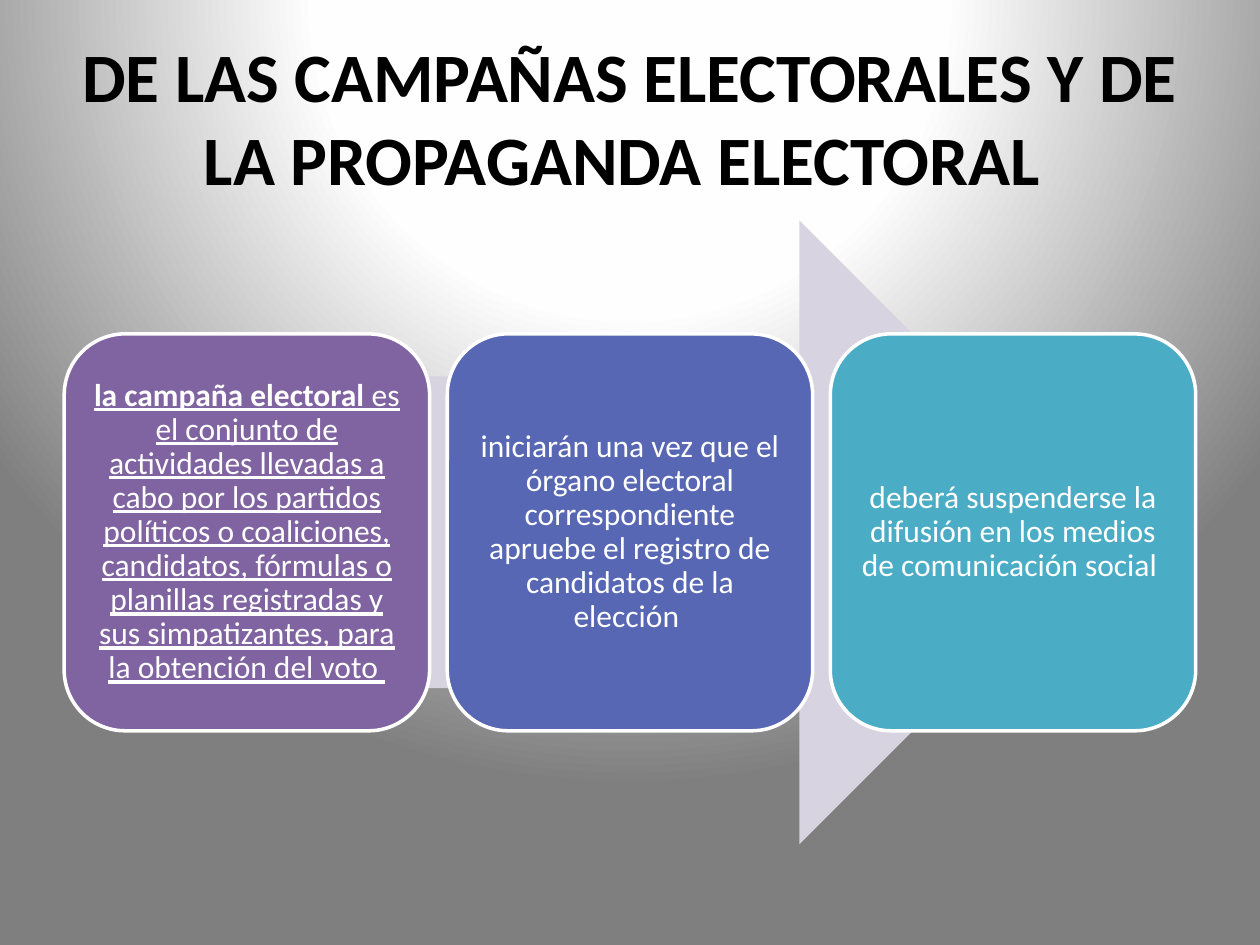
from dataclasses import dataclass

from pptx import Presentation
from pptx.dml.color import RGBColor
from pptx.enum.shapes import MSO_SHAPE
from pptx.enum.text import MSO_ANCHOR, PP_ALIGN
from pptx.oxml import parse_xml
from pptx.oxml.ns import nsdecls, qn
from pptx.slide import Slide
from pptx.util import Pt

ARROW = MSO_SHAPE.RIGHT_ARROW
ROUNDED = MSO_SHAPE.ROUNDED_RECTANGLE
MIDDLE = MSO_ANCHOR.MIDDLE
CENTER = PP_ALIGN.CENTER

BLACK = RGBColor(0x00, 0x00, 0x00)
WHITE = RGBColor(0xFF, 0xFF, 0xFF)
LAVENDER = RGBColor(0xD8, 0xD3, 0xE0)
PURPLE = RGBColor(0x80, 0x64, 0xA2)
BLUE = RGBColor(0x57, 0x67, 0xB4)
TEAL = RGBColor(0x4B, 0xAC, 0xC6)

FONT = "Calibri"
TITLE = "DE LAS CAMPAÑAS ELECTORALES Y DE LA PROPAGANDA ELECTORAL "
BACKGROUND_STOPS = ((0, "FFFFFF"), (40, "FEFEFE"), (100, "7F7F7F"))

CARD_LEFT, CARD_TOP = 36.7, 190.8
CARD_WIDTH, CARD_HEIGHT = 208.8, 226.8
CARD_PITCH = 218.9
CARD_INSET = 5


@dataclass(frozen=True)
class Card:
    color: RGBColor
    text: str
    lead: str = ""
    underline: bool = False


CARDS = (
    Card(
        PURPLE,
        "es el conjunto de actividades llevadas a cabo por los partidos políticos "
        "o coaliciones, candidatos, fórmulas o planillas registradas y sus "
        "simpatizantes, para la obtención del voto ",
        lead="la campaña electoral ",
        underline=True,
    ),
    Card(
        BLUE,
        "iniciarán una vez que el órgano electoral correspondiente apruebe "
        "el registro de candidatos de la elección ",
    ),
    Card(TEAL, "deberá suspenderse la difusión en los medios de comunicación social "),
)


def set_background(s: Slide) -> None:
    s.background.fill.gradient()
    stops = "".join(
        f'<a:gs pos="{pos * 1000}"><a:srgbClr val="{color}"/></a:gs>'
        for pos, color in BACKGROUND_STOPS
    )
    radial = parse_xml(
        f'<a:gradFill {nsdecls("a")} rotWithShape="1"><a:gsLst>{stops}</a:gsLst>'
        '<a:path path="circle">'
        '<a:fillToRect l="50000" t="-80000" r="50000" b="180000"/>'
        "</a:path></a:gradFill>"
    )
    grad = s.element.find(f".//{qn('a:gradFill')}")
    grad.getparent().replace(grad, radial)


def add_title(s: Slide) -> None:
    tf = s.shapes.add_textbox(Pt(36), Pt(21.6), Pt(648), Pt(90)).text_frame
    tf.word_wrap = True
    tf.vertical_anchor = MIDDLE
    p = tf.paragraphs[0]
    p.text = TITLE
    p.alignment = CENTER
    p.font.name = FONT
    p.font.size = Pt(39.6)
    p.font.bold = True
    p.font.color.rgb = BLACK


def add_arrow(s: Slide) -> None:
    sp = s.shapes.add_shape(ARROW, Pt(84.2), Pt(126), Pt(550.8), Pt(356.4))
    sp.shadow.inherit = False
    sp.fill.solid()
    sp.fill.fore_color.rgb = LAVENDER
    sp.line.fill.background()


def add_card(s: Slide, card: Card, left: float) -> None:
    sp = s.shapes.add_shape(
        ROUNDED, Pt(left), Pt(CARD_TOP), Pt(CARD_WIDTH), Pt(CARD_HEIGHT)
    )
    sp.shadow.inherit = False
    sp.fill.solid()
    sp.fill.fore_color.rgb = card.color
    sp.line.color.rgb = WHITE
    sp.line.width = Pt(2)
    tf = sp.text_frame
    tf.word_wrap = True
    tf.vertical_anchor = MIDDLE
    tf.margin_left = tf.margin_right = Pt(CARD_INSET)
    tf.margin_top = tf.margin_bottom = Pt(CARD_INSET)
    p = tf.paragraphs[0]
    p.alignment = CENTER
    p.line_spacing = 0.9
    p.font.name = FONT
    p.font.size = Pt(18)
    p.font.color.rgb = WHITE
    p.font.underline = card.underline
    if card.lead:
        r = p.add_run()
        r.text = card.lead
        r.font.bold = True
    p.add_run().text = card.text


def main() -> None:
    prs = Presentation()
    prs.slide_width, prs.slide_height = Pt(720), Pt(540)
    s = prs.slides.add_slide(prs.slide_layouts[6])
    set_background(s)
    add_title(s)
    add_arrow(s)
    for i, card in enumerate(CARDS):
        add_card(s, card, CARD_LEFT + i * CARD_PITCH)
    prs.save("out.pptx")


if __name__ == "__main__":
    main()
